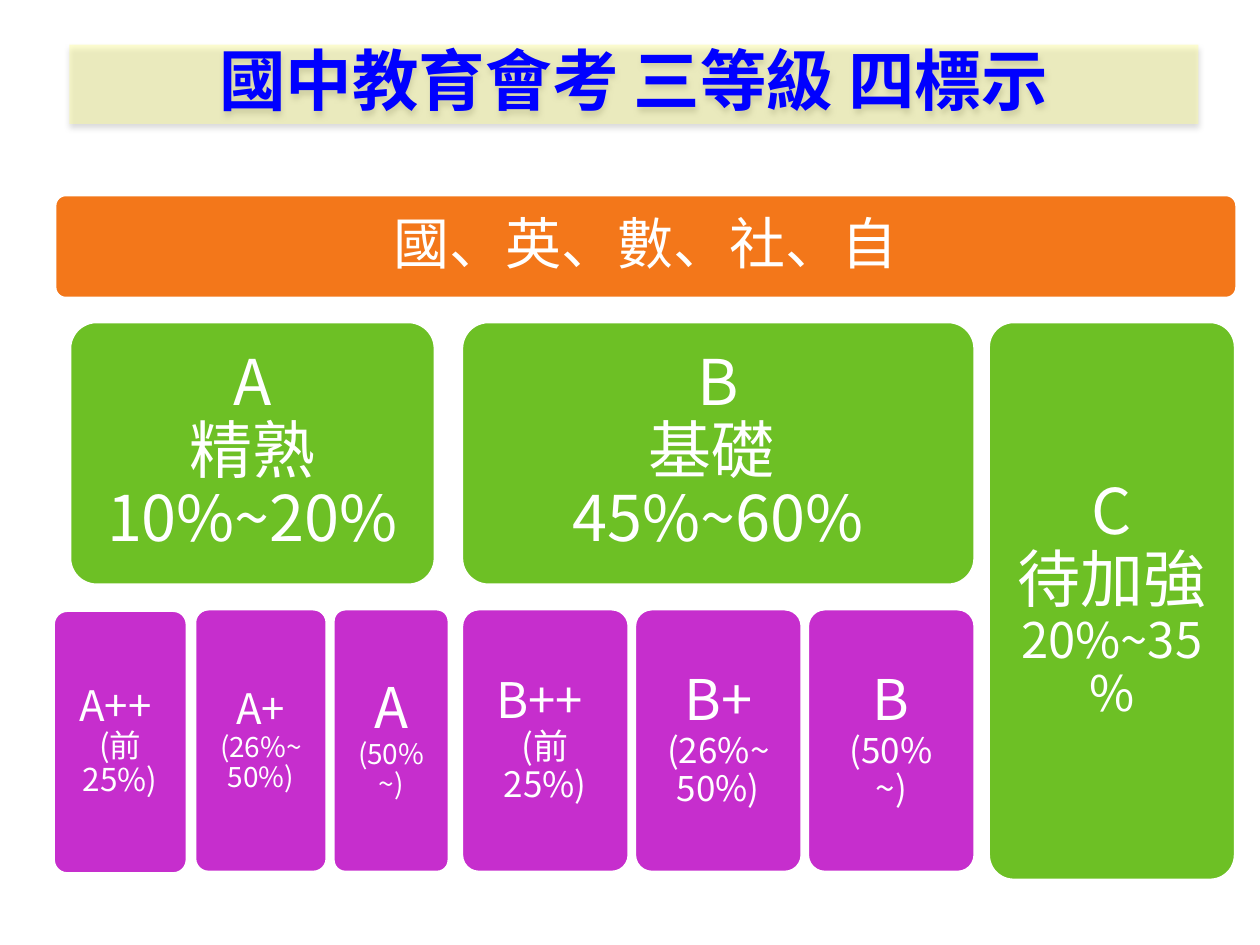
from lxml import etree
from pptx import Presentation
from pptx import util as u
from pptx.dml.color import RGBColor
from pptx.enum import shapes, text
from pptx.oxml import ns

COLORS = {
    "banner": "FFFF99", "title": "0000FF", "subjects": "F3771A",
    "level": "6DC025", "mark": "C62ECD", "white": "FFFFFF", "shadow": "000000",
}
SC, TC = "Noto Sans CJK SC", "Noto Sans CJK TC"


def rgb(name):
    return RGBColor.from_string(COLORS[name])


def add_xml(parent, tag, **attrs):
    return etree.SubElement(parent, ns.qn(tag), attrs)


class Deck:
    def __init__(self, prs):
        self.prs = prs
        self.s = prs.slides.add_slide(prs.slide_layouts[6])

    def shape(self, kind, box, fill, inset):
        sp = self.s.shapes.add_shape(kind, *[u.Cm(v) for v in box])
        sp.shadow.inherit = False
        sp.fill.solid()
        sp.fill.fore_color.rgb = rgb(fill)
        tf = sp.text_frame
        tf.word_wrap = True
        tf.vertical_anchor = text.MSO_ANCHOR.MIDDLE
        tf.margin_left = tf.margin_right = u.Cm(inset)
        tf.margin_top = tf.margin_bottom = u.Cm(inset)
        return sp

    def add_text(self, sp, runs, font, color="white", bold=False):
        """Each run is (text, size); a newline becomes a line break."""
        p = sp.text_frame.paragraphs[0]
        p.alignment = text.PP_ALIGN.CENTER
        p.line_spacing = 0.9
        for words, size in runs:
            for i, line in enumerate(words.split("\n")):
                if i:
                    p.add_line_break()
                if not line:
                    continue
                r = p.add_run()
                r.text = line
                r.font.name = font
                r.font.size = u.Pt(size)
                r.font.bold = bold
                r.font.color.rgb = rgb(color)
                add_xml(r.font._element, "a:ea", typeface=font)

    def banner(self, box, words, size):
        sp = self.shape(shapes.MSO_SHAPE.RECTANGLE, box, "banner", 0.13)
        sp.line.fill.background()
        pr = sp._element.spPr
        add_xml(pr.find(".//" + ns.qn("a:srgbClr")), "a:alpha", val="44000")
        shadow = add_xml(pr.find(ns.qn("a:effectLst")), "a:outerShdw",
                         blurRad=str(u.Pt(3.5)), dist=str(u.Pt(2.2)),
                         dir="5400000", rotWithShape="0")
        clr = add_xml(shadow, "a:srgbClr", val=COLORS["shadow"])
        add_xml(clr, "a:alpha", val="32000")
        self.add_text(sp, [(words, size)], SC, "title", True)

    def card(self, box, fill, runs, font=SC, inset=0.38):
        sp = self.shape(shapes.MSO_SHAPE.ROUNDED_RECTANGLE, box, fill, inset)
        sp.adjustments[0] = 0.1
        sp.line.color.rgb = rgb("white")
        sp.line.width = u.Pt(1)
        self.add_text(sp, runs, font)


def main():
    prs = Presentation()
    prs.slide_width, prs.slide_height = u.Cm(25.4), u.Cm(19.05)
    deck = Deck(prs)

    # Title and subjects
    deck.banner((1.4, 0.9, 22.76, 1.6), "國中教育會考 三等級 四標示", 38)
    deck.card((1.12, 3.94, 23.8, 2.06), "subjects",
              [("國、英、數、社、自", 32)], inset=0.33)

    # Three levels
    level_top, row_h = 6.5, 5.28
    b_left, b_width = 9.32, 10.32
    levels = [
        (1.42, 7.34, row_h, [("A\n精熟10%~20%", 36)]),
        (b_left, b_width, row_h, [("B\n基礎 \n45%~60%", 36)]),
        (19.94, 4.95, 11.23, [("C\n待加強", 36), ("20%~35%", 28)]),
    ]
    for left, width, height, runs in levels:
        deck.card((left, level_top, width, height), "level", runs)

    # Marks within A
    mark_top = 12.29
    a_marks = [
        (1.09, 0.03, 2.67, 0.25, [("A++ \n", 24), ("(前25%)", 18)]),
        (3.94, 0, 2.64, 0.25, [("A+", 24), (" ", 12), ("(26%~\n50%)", 16)]),
        (6.73, 0, 2.31, 0.33, [("A\n", 32), ("(50%~)", 16)]),
    ]
    for left, drop, width, inset, runs in a_marks:
        deck.card((left, mark_top + drop, width, row_h), "mark", runs, TC, inset)

    # Marks within B, evenly spaced under its level
    gap = 0.14
    width = (b_width - 2 * gap) / 3
    b_marks = [
        (0.3, [("B++ \n", 28), ("(前\n25%)", 20)]),
        (0.33, [("B+", 32), (" ", 16), ("(26%~\n50%)", 20)]),
        (0.33, [("B\n", 32), ("(50%\n~)", 20)]),
    ]
    for i, (inset, runs) in enumerate(b_marks):
        left = b_left + i * (width + gap)
        deck.card((left, mark_top, width, row_h), "mark", runs, TC, inset)

    prs.save("out.pptx")


if __name__ == "__main__":
    main()
